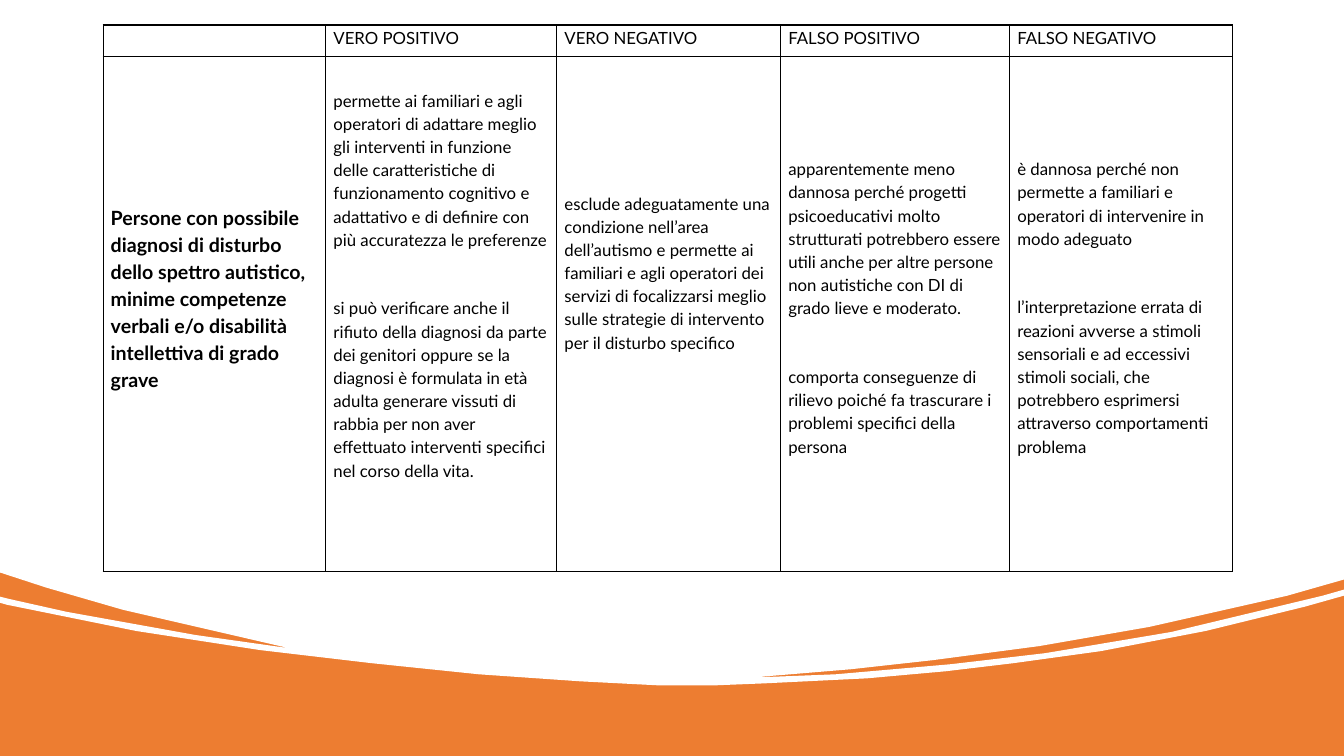
import pptx
import pptx.dml.color
import pptx.enum.shapes
import pptx.enum.text
import pptx.oxml
import pptx.oxml.ns
import pptx.util

Cm = pptx.util.Cm
Pt = pptx.util.Pt
RGBColor = pptx.dml.color.RGBColor

ORANGE = RGBColor(0xED, 0x7D, 0x31)
WHITE = RGBColor(0xFF, 0xFF, 0xFF)
BLACK = RGBColor(0x00, 0x00, 0x00)

BLANK_LINE = Pt(24.5)  # one 12 pt line plus its space after
FIRST_LINE_TRIM = Pt(2.2)  # a first line is set without extra leading
OUTLINE_UNIT = Cm(0.0254)

# Corners in hundredths of an inch, clockwise from the top left.
WAVE_OUTLINE = [
    (0, 0), (1333, 0), (1333, 575), (1319, 579), (1277, 591), (1140, 622),
    (1031, 641), (925, 655), (844, 664), (760, 671), (743, 673), (753, 672),
    (829, 669), (943, 659), (1037, 648), (1162, 627), (1312, 591), (1333, 585),
    (1333, 591), (1294, 602), (1196, 626), (1092, 646), (1005, 658), (938, 666),
    (860, 673), (758, 678), (708, 680), (654, 680), (576, 676), (475, 669),
    (369, 658), (258, 645), (135, 626), (7, 600), (0, 598), (0, 592),
    (8, 594), (66, 607), (194, 630), (286, 643), (282, 642), (122, 605),
    (46, 583), (0, 568),
]

COLUMN_WIDTHS = [5.61, 5.82, 5.64, 5.77, 5.61]
ROW_HEIGHTS = [0.79, 12.98]
HEADINGS = ["VERO POSITIVO", "VERO NEGATIVO", "FALSO POSITIVO", "FALSO NEGATIVO"]
PERSON_GROUP = (
    "Persone con possibile diagnosi di disturbo dello spettro autistico, minime "
    "competenze verbali e/o disabilità intellettiva di grado grave"
)
# Blank lines above the text, then its paragraphs.
OUTCOMES = [
    (1, [
        "permette ai familiari e agli operatori di adattare meglio gli interventi in "
        "funzione delle caratteristiche di funzionamento cognitivo e adattativo e di "
        "definire con più accuratezza le preferenze",
        "si può verificare anche il rifiuto della diagnosi da parte dei genitori oppure "
        "se la diagnosi è formulata in età adulta generare vissuti di rabbia per non "
        "aver effettuato interventi specifici nel corso della vita.",
    ]),
    (4, [
        "esclude adeguatamente una condizione nell’area dell’autismo e permette ai "
        "familiari e agli operatori dei servizi di focalizzarsi meglio sulle strategie "
        "di intervento per il disturbo specifico",
    ]),
    (3, [
        "apparentemente meno dannosa perché progetti psicoeducativi molto strutturati "
        "potrebbero essere utili anche per altre persone non autistiche con DI di grado "
        "lieve e moderato.",
        "comporta conseguenze di rilievo poiché fa trascurare i problemi specifici "
        "della persona",
    ]),
    (3, [
        "è dannosa perché non permette a familiari e operatori di intervenire in modo "
        "adeguato",
        "l’interpretazione errata di reazioni avverse a stimoli sensoriali e ad "
        "eccessivi stimoli sociali, che potrebbero esprimersi attraverso comportamenti "
        "problema",
    ]),
]


class SlideBuilder:
    font_name = "Lato"

    def __init__(self, presentation):
        self.slide = presentation.slides.add_slide(presentation.slide_layouts[6])

    def paint(self, shape, color):
        shape.shadow.inherit = False
        shape.fill.solid()
        shape.fill.fore_color.rgb = color
        shape.line.fill.background()

    def rectangle(self, left, top, width, height, color):
        kind = pptx.enum.shapes.MSO_SHAPE.RECTANGLE
        shape = self.slide.shapes.add_shape(kind, left, top, width, height)
        self.paint(shape, color)

    def area(self, corners, color):
        builder = self.slide.shapes.build_freeform(*corners[0], scale=OUTLINE_UNIT)
        builder.add_line_segments(corners[1:], close=True)
        self.paint(builder.convert_to_shape(), color)

    def table(self, left, top, column_widths, row_heights):
        frame = self.slide.shapes.add_table(
            len(row_heights), len(column_widths), left, top,
            Cm(sum(column_widths)), Cm(sum(row_heights)),
        )
        table = frame.table
        table.first_row = table.horz_banding = False
        for column, width in zip(table.columns, column_widths):
            column.width = Cm(width)
        for row, height in zip(table.rows, row_heights):
            row.height = Cm(height)
        for cell in table.iter_cells():
            cell.margin_left = cell.margin_right = Cm(0.19)
            cell.margin_top = cell.margin_bottom = 0
            self.border(cell)
            cell.fill.background()
        return table

    def border(self, cell):
        properties = cell._tc.get_or_add_tcPr()
        for side in ("lnL", "lnR", "lnT", "lnB"):
            properties.append(pptx.oxml.parse_xml(
                f'<a:{side} {pptx.oxml.ns.nsdecls("a")} w="{Pt(1)}"><a:solidFill>'
                f'<a:srgbClr val="{BLACK}"/></a:solidFill></a:{side}>'
            ))

    def cell_text(self, cell, texts, size=12, bold=False):
        cell.text_frame.text = "\n".join(texts)
        for index, paragraph in enumerate(cell.text_frame.paragraphs):
            paragraph.line_spacing = 1.15
            paragraph.space_after = Pt(8)
            if index:
                paragraph.space_before = BLANK_LINE
            for run in paragraph.runs:
                run.font.name = self.font_name
                run.font.size = Pt(size)
                run.font.bold = bold
                run.font.color.rgb = BLACK


def main():
    presentation = pptx.Presentation()
    presentation.slide_width = Cm(33.86)
    presentation.slide_height = Cm(19.05)
    builder = SlideBuilder(presentation)

    builder.rectangle(0, 0, presentation.slide_width, presentation.slide_height, ORANGE)
    builder.area(WAVE_OUTLINE, WHITE)

    table = builder.table(Cm(2.6), Cm(0.63), COLUMN_WIDTHS, ROW_HEIGHTS)
    group_cell = table.cell(1, 0)
    builder.cell_text(group_cell, [PERSON_GROUP], size=14, bold=True)
    group_cell.vertical_anchor = pptx.enum.text.MSO_ANCHOR.MIDDLE
    group_cell.margin_bottom = Pt(24)
    for column, (heading, outcome) in enumerate(zip(HEADINGS, OUTCOMES), start=1):
        builder.cell_text(table.cell(0, column), [heading])
        blank_lines, texts = outcome
        outcome_cell = table.cell(1, column)
        builder.cell_text(outcome_cell, texts)
        outcome_cell.margin_top = blank_lines * BLANK_LINE - FIRST_LINE_TRIM

    presentation.save("out.pptx")


if __name__ == "__main__":
    main()
